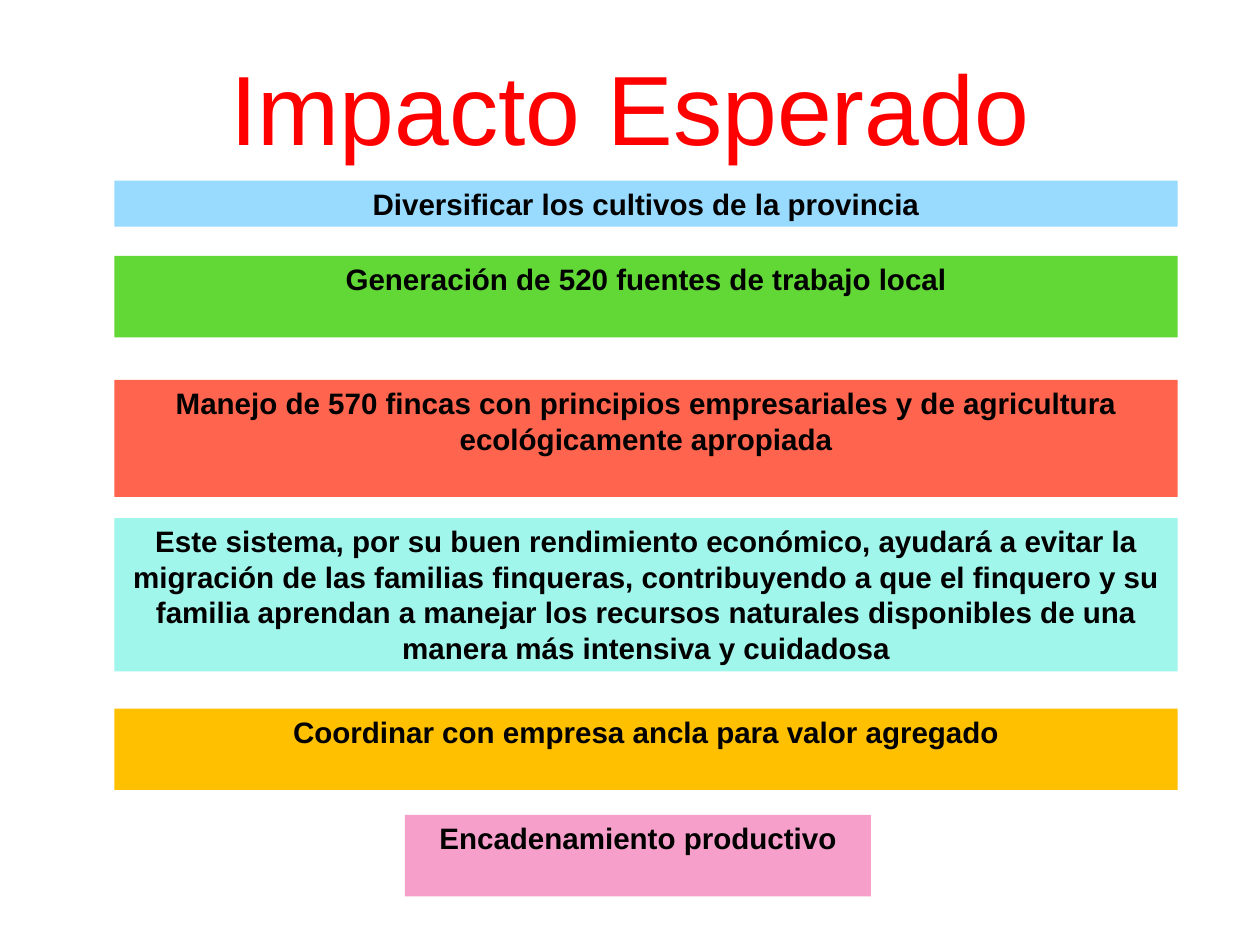
from dataclasses import dataclass

from pptx import Presentation
from pptx import util as u
from pptx.dml import color
from pptx.enum import shapes, text

PX = 9144
FONT = "Arial"
INSET = 6
BAR_LEFT, BAR_WIDTH = 129, 1200
COLORS = {
    "title": "FF0000",
    "text": "000000",
    "sky": "99DAFF",
    "green": "61D836",
    "coral": "FF644E",
    "aqua": "A1F6EC",
    "amber": "FFC000",
    "pink": "F59FCA",
}


@dataclass(frozen=True)
class Impact:
    wording: str
    fill: str
    top: int
    height: int
    left: int = BAR_LEFT
    width: int = BAR_WIDTH


IMPACTS = [
    Impact("Diversificar los cultivos de la provincia", "sky", 204, 52),
    Impact("Generación de 520 fuentes de trabajo local", "green", 289, 92),
    Impact(
        "Manejo de 570 fincas con principios empresariales y de agricultura "
        "ecológicamente apropiada",
        "coral", 429, 132,
    ),
    Impact(
        "Este sistema, por su buen rendimiento económico, ayudará a evitar la "
        "migración de las familias finqueras, contribuyendo a que el finquero y su "
        "familia aprendan a manejar los recursos naturales disponibles de una "
        "manera más intensiva y cuidadosa",
        "aqua", 585, 173,
    ),
    Impact("Coordinar con empresa ancla para valor agregado", "amber", 800, 92),
    Impact("Encadenamiento productivo", "pink", 920, 92, 457, 526),
]


def px(length: int) -> u.Emu:
    return u.Emu(length * PX)


def rgb(name: str) -> color.RGBColor:
    return color.RGBColor.from_string(COLORS[name])


def write(box, wording: str, size: int, ink: str, bold: bool, anchor) -> None:
    frame = box.text_frame
    frame.text = wording
    frame.word_wrap = True
    frame.auto_size = text.MSO_AUTO_SIZE.NONE
    frame.vertical_anchor = anchor
    frame.margin_left = frame.margin_right = px(INSET)
    frame.margin_top = frame.margin_bottom = px(INSET)
    para = frame.paragraphs[0]
    para.alignment = text.PP_ALIGN.CENTER
    font = para.runs[0].font
    font.name, font.size, font.bold = FONT, u.Pt(size), bold
    font.color.rgb = rgb(ink)


def draw_title(page) -> None:
    title = page.shapes.title
    title.left, title.top = px(104), px(28)
    title.width, title.height = px(1214), px(184)
    write(title, "Impacto Esperado", 80, "title", False, text.MSO_ANCHOR.MIDDLE)


def draw_impact(page, impact: Impact) -> None:
    box = page.shapes.add_shape(
        shapes.MSO_SHAPE.RECTANGLE,
        px(impact.left), px(impact.top), px(impact.width), px(impact.height),
    )
    box.shadow.inherit = False
    box.fill.solid()
    box.fill.fore_color.rgb = rgb(impact.fill)
    box.line.fill.background()
    write(box, impact.wording, 24, "text", True, text.MSO_ANCHOR.TOP)
    box.text_frame.paragraphs[0].line_spacing = u.Pt(28.8)


def main() -> None:
    deck = Presentation()
    deck.slide_width, deck.slide_height = px(1422), px(1067)
    page = deck.slides.add_slide(deck.slide_layouts[5])
    draw_title(page)
    for impact in IMPACTS:
        draw_impact(page, impact)
    deck.save("out.pptx")


if __name__ == "__main__":
    main()
